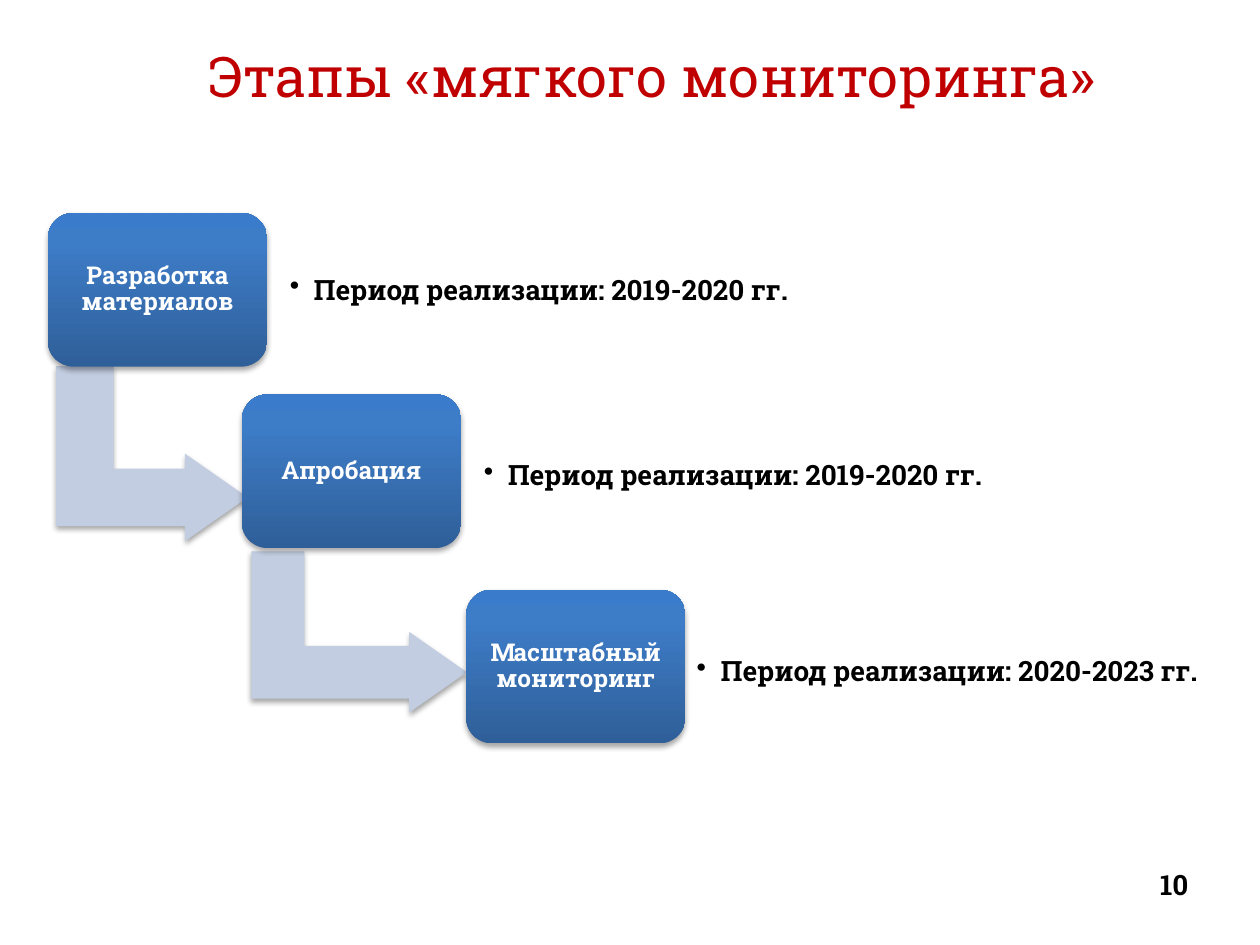
"""Build the slide with the three stages of soft monitoring."""
import pptx
import pptx.dml.color
import pptx.enum.shapes
import pptx.enum.text
import pptx.oxml
import pptx.oxml.ns
import pptx.util
import copy

Inches = pptx.util.Inches
Pt = pptx.util.Pt
RGBColor = pptx.dml.color.RGBColor
ALIGN = pptx.enum.text.PP_ALIGN
SHAPE = pptx.enum.shapes.MSO_SHAPE
NAMESPACE = pptx.oxml.ns.nsdecls("a")
COLORS = {
    "title": "C00000",
    "text": "000000",
    "stage_text": "FFFFFF",
    "arrow": "C2CDE1",
    "stage_bottom": "2F5F99",
    "stage_middle": "3D7CC7",
    "stage_top": "3A7CCB",
    "shadow": "000000",
}
SHADOW = (
    f'<a:outerShdw {NAMESPACE} blurRad="40000" dist="23000" dir="5400000" rotWithShape="0">'
    f'<a:srgbClr val="{COLORS["shadow"]}"><a:alpha val="35000"/></a:srgbClr></a:outerShdw>'
)


def add_text(box, text, size, color, bold, margins, paragraph_format):
    textbox = slide.shapes.add_textbox(*map(Inches, box))
    frame = textbox.text_frame
    frame_format = {
        "word_wrap": True,
        "vertical_anchor": pptx.enum.text.MSO_ANCHOR.MIDDLE,
        "margin_left": Inches(margins[0]),
        "margin_right": Inches(margins[0]),
        "margin_top": Inches(margins[1]),
        "margin_bottom": Inches(margins[1]),
    }
    for name, value in frame_format.items():
        setattr(frame, name, value)
    paragraph = frame.paragraphs[0]
    for name, value in paragraph_format.items():
        setattr(paragraph, name, value)
    run = paragraph.add_run()
    run.text = text
    font_format = {"name": "Roboto Slab", "size": Pt(size), "bold": bold}
    for name, value in font_format.items():
        setattr(run.font, name, value)
    run.font.color.rgb = RGBColor.from_string(COLORS[color])
    return paragraph


def add_shadowed_shape(kind, box, adjustments):
    shape = slide.shapes.add_shape(kind, *map(Inches, box))
    for index, value in enumerate(adjustments):
        shape.adjustments[index] = value
    shape.line.fill.background()
    shape.shadow.inherit = False
    effects = shape._element.spPr.find(pptx.oxml.ns.qn("a:effectLst"))
    effects.append(pptx.oxml.parse_xml(SHADOW))
    return shape


presentation = pptx.Presentation()
presentation.slide_width = Inches(10)
presentation.slide_height = Inches(7.5)
slide = presentation.slides.add_slide(presentation.slide_layouts[6])

add_text((1.06, 0.13, 8.24, 0.94), "Этапы «мягкого мониторинга»", 32, "title", False,
         (0.1, 0.05), {"alignment": ALIGN.CENTER})

stages = [
    ("Разработка материалов", "2019-2020", (0.38, 1.69), (2.23, 1.82, 5.67, 0.98),
     (0.51, 2.84, 1.39, 1.52)),
    ("Апробация", "2019-2020", (1.92, 3.13), (3.77, 3.29, 4.79, 0.98),
     (2.21, 4.16, 1.28, 1.71)),
    ("Масштабный мониторинг", "2020-2023", (3.7, 4.68), (5.46, 4.85, 4.54, 0.98), None),
]
gradient = [(0, "stage_bottom"), (0.8, "stage_middle"), (1, "stage_top")]

for name, years, (left, top), period_box, arrow_box in stages:
    if arrow_box:
        arrow = add_shadowed_shape(SHAPE.BENT_UP_ARROW, arrow_box, (0.328, 0.25, 0.358))
        arrow.rotation = 90
        arrow.fill.solid()
        arrow.fill.fore_color.rgb = RGBColor.from_string(COLORS["arrow"])

    stage = add_shadowed_shape(SHAPE.ROUNDED_RECTANGLE, (left, top, 1.74, 1.22), (0.167,))
    stage.fill.gradient()
    stage.fill.gradient_angle = 90
    stop_list = stage._element.spPr.find(".//" + pptx.oxml.ns.qn("a:gsLst"))
    stop_list.append(copy.deepcopy(stop_list[-1]))
    for stop, (position, color) in zip(stage.fill.gradient_stops, gradient):
        stop.position = position
        stop.color.rgb = RGBColor.from_string(COLORS[color])

    add_text((left + 0.06, top + 0.06, 1.62, 1.1), name, 14, "stage_text", True, (0.06, 0.06),
             {"alignment": ALIGN.CENTER, "line_spacing": 0.9, "space_after": Pt(4.9)})
    period = add_text(period_box, f"Период реализации: {years} гг.", 16, "text", True,
                      (0.07, 0.07),
                      {"level": 1, "line_spacing": 0.9, "space_after": Pt(2.4)})
    properties = period._p.get_or_add_pPr()
    properties.set("marL", str(Inches(0.19)))
    properties.set("indent", str(Inches(-0.19)))
    properties.append(pptx.oxml.parse_xml(f'<a:buChar {NAMESPACE} char="•"/>'))

add_text((7.2, 6.82, 2.33, 0.4), "10", 16, "text", True, (0.1, 0.05),
         {"alignment": ALIGN.RIGHT})

presentation.save("out.pptx")
